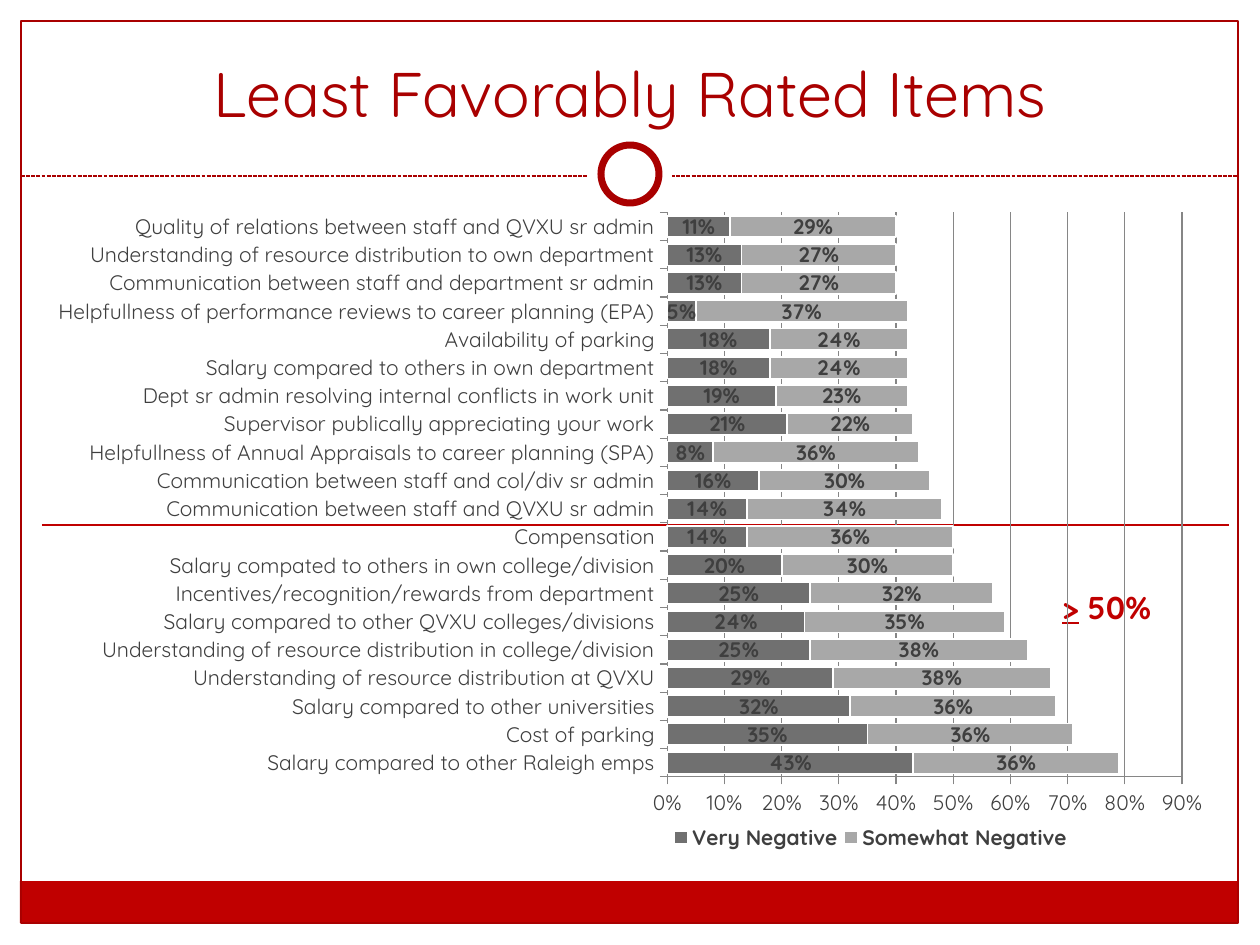
from dataclasses import dataclass

from lxml import etree
from pptx import Presentation
from pptx import util as u
from pptx.chart.data import CategoryChartData
from pptx.dml.color import RGBColor
from pptx.enum import chart as ch, dml, shapes, text
from pptx.oxml import parse_xml
from pptx.oxml.ns import nsdecls, qn

PX_PER_INCH = 126


@dataclass(frozen=True)
class Theme:
    font: str = "Quicksand"
    title_red: str = "A90000"
    red: str = "C00000"
    white: str = "FFFFFF"
    ink: str = "3F3F3F"
    axis: str = "868686"
    very: str = "707070"
    somewhat: str = "A8A8A8"
    title_size: int = 36
    callout_size: int = 18
    chart_size: int = 12


THEME = Theme()

# Item, very negative %, somewhat negative %; listed from the bottom bar up
RATINGS = [
    ("Salary compared to other Raleigh emps", 43, 36),
    ("Cost of parking", 35, 36),
    ("Salary compared to other universities", 32, 36),
    ("Understanding of resource distribution at QVXU", 29, 38),
    ("Understanding of resource distribution in college/division", 25, 38),
    ("Salary compared to other QVXU colleges/divisions", 24, 35),
    ("Incentives/recognition/rewards from department", 25, 32),
    ("Salary compated to others in own college/division", 20, 30),
    ("Compensation", 14, 36),
    ("Communication between staff and QVXU sr admin", 14, 34),
    ("Communication between staff and col/div sr admin", 16, 30),
    ("Helpfullness of Annual Appraisals to career planning (SPA)", 8, 36),
    ("Supervisor publically appreciating your work", 21, 22),
    ("Dept sr admin resolving internal conflicts in work unit", 19, 23),
    ("Salary compared to others in own department", 18, 24),
    ("Availability of parking", 18, 24),
    ("Helpfullness of performance reviews to career planning (EPA)", 5, 37),
    ("Communication between staff and department sr admin", 13, 27),
    ("Understanding of resource distribution to own department", 13, 27),
    ("Quality of relations between staff and QVXU sr admin", 11, 29),
]


def px(length):
    return u.Inches(length / PX_PER_INCH)


def box(*lengths):
    return [px(length) for length in lengths]


def rgb(color):
    return RGBColor.from_string(color)


def style_line(line, color, width, dash=None):
    line.color.rgb = rgb(color)
    line.width = u.Pt(width)
    if dash:
        line.dash_style = dash


def style_font(font, size, color, bold=False, underline=None):
    font.name, font.size = THEME.font, u.Pt(size)
    font.bold, font.underline = bold, underline
    font.color.rgb = rgb(color)


def add_outline(slide, kind, place, fill=None, line=None, width=0.75):
    outline = slide.shapes.add_shape(kind, *box(*place))
    outline.shadow.inherit = False
    if fill:
        outline.fill.solid()
        outline.fill.fore_color.rgb = rgb(fill)
    else:
        outline.fill.background()
    if line:
        style_line(outline.line, line, width)
    else:
        outline.line.fill.background()


def add_rule(slide, left, right, y, color, width, dash=None):
    rule = slide.shapes.add_connector(
        shapes.MSO_CONNECTOR.STRAIGHT, *box(left, y, right, y))
    style_line(rule.line, color, width, dash)
    etree.SubElement(rule._element.spPr, qn("a:effectLst"))


def add_text(slide, place, runs, size, color, bold=False,
             align=text.PP_ALIGN.LEFT, anchor=text.MSO_ANCHOR.TOP):
    """Add one paragraph; runs holds (wording, underlined) pairs."""
    frame = slide.shapes.add_textbox(*box(*place)).text_frame
    frame.word_wrap = True
    frame.vertical_anchor = anchor
    paragraph = frame.paragraphs[0]
    paragraph.alignment = align
    for wording, underlined in runs:
        run = paragraph.add_run()
        run.text = wording
        style_font(run.font, size, color, bold, underlined)


def set_layout(parent, x, y, w, h, inner=False):
    """Fix a chart part at fractions of the chart's size."""
    target = '<c:layoutTarget val="inner"/>' if inner else ""
    modes = '<c:xMode val="edge"/><c:yMode val="edge"/>'
    sizes = "".join(f'<c:{tag} val="{value}"/>'
                    for tag, value in zip("xywh", (x, y, w, h)))
    layout = parse_xml(
        f'<c:layout {nsdecls("c")}><c:manualLayout>{target}{modes}{sizes}'
        "</c:manualLayout></c:layout>")
    for old in parent.findall(qn("c:layout")):
        parent.remove(old)
    position = parent.find(qn("c:legendPos"))
    if position is None:
        parent.insert(0, layout)
    else:
        position.addnext(layout)


def style_axis(axis):
    axis.major_tick_mark = ch.XL_TICK_MARK.OUTSIDE
    axis.minor_tick_mark = ch.XL_TICK_MARK.NONE
    style_line(axis.format.line, THEME.axis, 0.75)
    style_font(axis.tick_labels.font, THEME.chart_size, THEME.ink)


def style_series(series, color):
    series.invert_if_negative = False
    series.format.fill.solid()
    series.format.fill.fore_color.rgb = rgb(color)
    style_line(series.format.line, THEME.white, 1)
    labels = series.data_labels
    labels.show_value = True
    labels.number_format, labels.number_format_is_linked = "0%", False
    style_font(labels.font, THEME.chart_size, THEME.ink, bold=True)


def add_ratings_chart(slide, place):
    items, very, somewhat = zip(*RATINGS)
    data = CategoryChartData(number_format="0%")
    data.categories = items
    data.add_series("Very Negative", [value / 100 for value in very])
    data.add_series("Somewhat Negative", [value / 100 for value in somewhat])
    chart = slide.shapes.add_chart(
        ch.XL_CHART_TYPE.BAR_STACKED, *box(*place), data).chart
    style_font(chart.font, THEME.chart_size, THEME.ink)
    chart.has_title = False

    plot = chart.plots[0]
    plot.gap_width, plot.overlap = 30, 100
    plot.vary_by_categories = False
    for series, color in zip(plot.series, (THEME.very, THEME.somewhat)):
        style_series(series, color)

    style_axis(chart.category_axis)
    scale = chart.value_axis
    style_axis(scale)
    scale.minimum_scale, scale.maximum_scale, scale.major_unit = 0, 0.9, 0.1
    scale.tick_labels.number_format = "0%"
    scale.tick_labels.number_format_is_linked = False
    scale.has_major_gridlines = True
    style_line(scale.major_gridlines.format.line, THEME.axis, 0.75)

    chart.has_legend = True
    legend = chart.legend
    legend.position = ch.XL_LEGEND_POSITION.BOTTOM
    legend.include_in_layout = False
    style_font(legend.font, THEME.chart_size, THEME.ink, bold=True)
    set_layout(chart._chartSpace.chart.plotArea, 0.53, 0.02, 0.43, 0.84, True)
    set_layout(legend._element, 0.53, 0.92, 0.34, 0.06)


def add_decor(slide):
    rect, oval = shapes.MSO_SHAPE.RECTANGLE, shapes.MSO_SHAPE.OVAL
    add_outline(slide, rect, (20, 881, 1218, 42), fill=THEME.red)
    add_outline(slide, rect, (21, 21, 1217, 902), line=THEME.title_red)
    add_rule(slide, 21, 1238, 176, THEME.title_red, 0.75,
             dml.MSO_LINE.SQUARE_DOT)
    add_outline(slide, oval, (588, 132, 84, 84), fill=THEME.white)
    add_outline(slide, oval, (601, 145, 58, 58), fill=THEME.white,
                line=THEME.title_red, width=4)


def main():
    deck = Presentation()
    deck.slide_width, deck.slide_height = box(1260, 945)
    slide = deck.slides.add_slide(deck.slide_layouts[6])
    add_decor(slide)
    add_text(slide, (42, 32, 1176, 104), [("Least Favorably Rated Items", None)],
             THEME.title_size, THEME.title_red,
             align=text.PP_ALIGN.CENTER, anchor=text.MSO_ANCHOR.BOTTOM)
    add_rule(slide, 42, 1229, 525, THEME.red, 1.5)
    add_text(slide, (1050, 582, 168, 50), [(">", True), (" 50%", False)],
             THEME.callout_size, THEME.red, bold=True)
    add_ratings_chart(slide, (33, 199, 1197, 672))
    deck.save("out.pptx")


if __name__ == "__main__":
    main()
